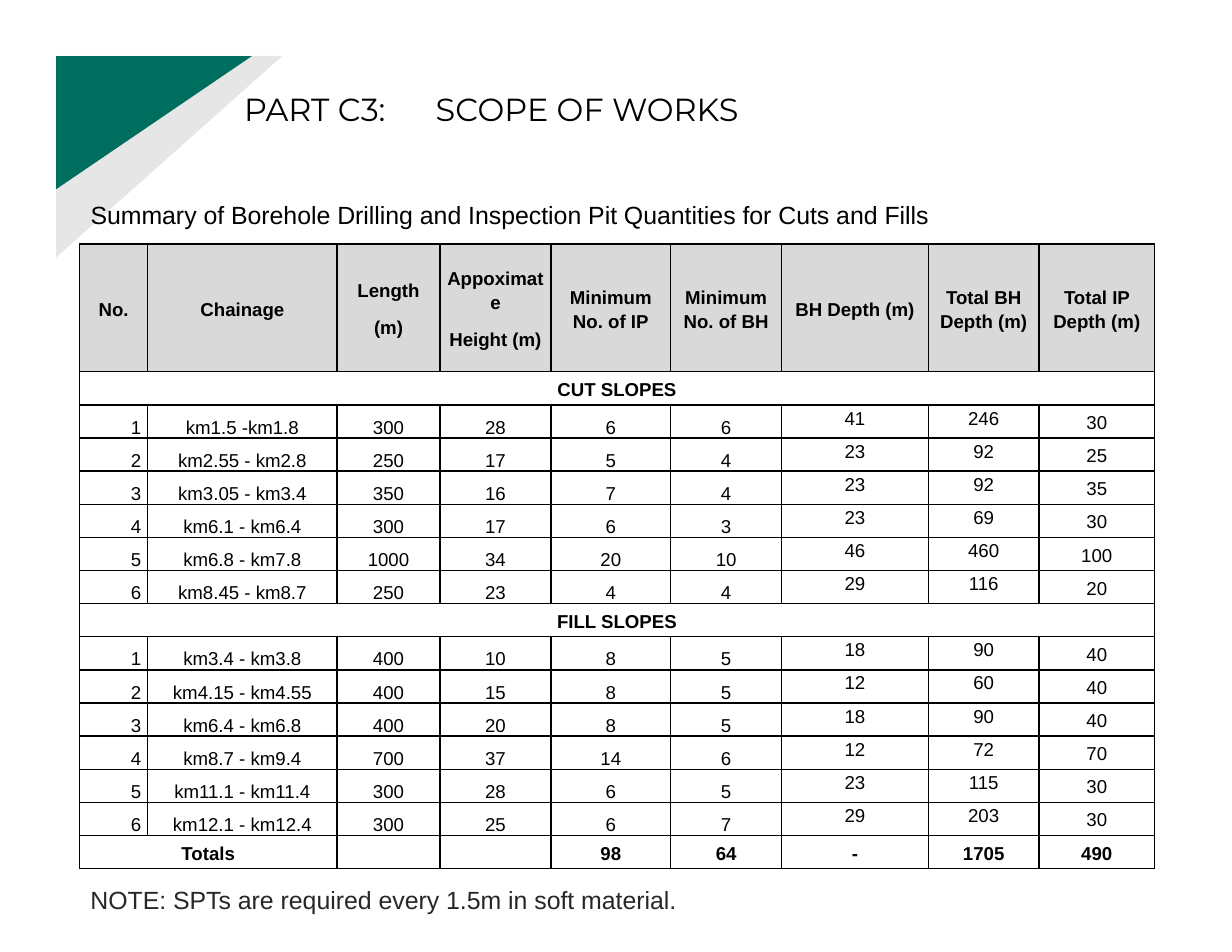
from lxml.etree import SubElement
from pptx import Presentation
from pptx.dml.color import RGBColor
from pptx.enum.text import MSO_ANCHOR, PP_ALIGN
from pptx.oxml.ns import qn
from pptx.util import Inches, Pt

COLORS = {
    "black": "000000",
    "note": "272727",
    "green": "006E5E",
    "grey": "E6E6E6",
    "header": "D9D9D9",
}

COLUMN_WIDTHS = [0.61, 1.69, 0.92, 0.99, 1.07, 0.99, 1.31, 0.99, 1.03]
TABLE_HEIGHT, HEADER_HEIGHT = 5.58, 1.14
HEADERS = [
    "No.", "Chainage", "Length\n(m)", "Appoximate\nHeight (m)",
    "Minimum No. of IP", "Minimum No. of BH", "BH Depth (m)",
    "Total BH Depth (m)", "Total IP Depth (m)",
]
# Chainage, length, height, IPs, BHs, BH depth, total BH depth, total IP depth
SECTIONS = {
    "CUT SLOPES": [
        ("km1.5 -km1.8", 300, 28, 6, 6, 41, 246, 30),
        ("km2.55 - km2.8", 250, 17, 5, 4, 23, 92, 25),
        ("km3.05 - km3.4", 350, 16, 7, 4, 23, 92, 35),
        ("km6.1 - km6.4", 300, 17, 6, 3, 23, 69, 30),
        ("km6.8 - km7.8", 1000, 34, 20, 10, 46, 460, 100),
        ("km8.45 - km8.7", 250, 23, 4, 4, 29, 116, 20),
    ],
    "FILL SLOPES": [
        ("km3.4 - km3.8", 400, 10, 8, 5, 18, 90, 40),
        ("km4.15 - km4.55", 400, 15, 8, 5, 12, 60, 40),
        ("km6.4 - km6.8", 400, 20, 8, 5, 18, 90, 40),
        ("km8.7 - km9.4", 700, 37, 14, 6, 12, 72, 70),
        ("km11.1 - km11.4", 300, 28, 6, 5, 23, 115, 30),
        ("km12.1 - km12.4", 300, 25, 6, 7, 29, 203, 30),
    ],
}
TOTALS = ["Totals", "", "", "", "98", "64", "-", "1705", "490"]
# Data cells sit low, except the two BH depth columns and the last one
DATA_ANCHORS = [MSO_ANCHOR.BOTTOM] * 6 + [MSO_ANCHOR.TOP] * 2 + [MSO_ANCHOR.MIDDLE]


def rgb(name):
    return RGBColor.from_string(COLORS[name])


def format_runs(p, size, font="Arial", color="black", bold=False):
    for r in p.runs:
        r.font.size = Pt(size)
        r.font.name = font
        r.font.bold = bold
        r.font.color.rgb = rgb(color)


def add_tab(p, position):
    tabs = SubElement(p._p.get_or_add_pPr(), qn("a:tabLst"))
    SubElement(tabs, qn("a:tab"), pos=str(Inches(position)), algn="l")


def add_corner(s, points, color):
    vertices = [(Inches(x), Inches(y)) for x, y in points]
    builder = s.shapes.build_freeform(*vertices[0])
    builder.add_line_segments(vertices[1:], close=True)
    sp = builder.convert_to_shape()
    sp.shadow.inherit = False
    sp.fill.solid()
    sp.fill.fore_color.rgb = rgb(color)
    sp.line.fill.background()


def add_text(s, left, top, width, height, text, color="black"):
    sp = s.shapes.add_textbox(Inches(left), Inches(top), Inches(width), Inches(height))
    tf = sp.text_frame
    tf.word_wrap = True
    tf.text = text
    p = tf.paragraphs[0]
    p.space_after = Pt(6)
    format_runs(p, 16, color=color)
    return p


def set_title(s, text):
    sp = s.shapes.title
    sp.left, sp.top = Inches(2.08), Inches(0.75)
    sp.width, sp.height = Inches(8.03), Inches(0.45)
    tf = sp.text_frame
    tf.text = text
    tf.word_wrap = True
    tf.vertical_anchor = MSO_ANCHOR.MIDDLE
    p = tf.paragraphs[0]
    p.alignment = PP_ALIGN.LEFT
    add_tab(p, 1.71)
    format_runs(p, 20.5, "Montserrat")


def set_borders(cell):
    tcPr = cell._tc.get_or_add_tcPr()
    for side in ("a:lnL", "a:lnR", "a:lnT", "a:lnB"):
        line = SubElement(tcPr, qn(side), w=str(Pt(1)))
        fill = SubElement(line, qn("a:solidFill"))
        SubElement(fill, qn("a:srgbClr"), val=COLORS["black"])


def fill_cell(cell, text, bold=False, anchor=MSO_ANCHOR.MIDDLE,
              align=PP_ALIGN.CENTER, fill=None):
    cell.margin_left = cell.margin_right = Inches(0.06)
    cell.margin_top = cell.margin_bottom = 0
    cell.vertical_anchor = anchor
    set_borders(cell)
    if fill:
        cell.fill.solid()
        cell.fill.fore_color.rgb = rgb(fill)
    else:
        cell.fill.background()
    cell.text_frame.text = text
    for p in cell.text_frame.paragraphs:
        p.alignment = align
        p.line_spacing = 1.15
        p.space_after = Pt(8)
        format_runs(p, 12, bold=bold)
        if not text:
            SubElement(p._p, qn("a:endParaRPr"), sz="1200")


def add_quantities(s):
    n_cols = len(HEADERS)
    n_rows = 2 + sum(1 + len(rows) for rows in SECTIONS.values())
    table = s.shapes.add_table(n_rows, n_cols, Inches(0.71), Inches(2.18),
                               Inches(sum(COLUMN_WIDTHS)), Inches(TABLE_HEIGHT)).table
    table.first_row = table.horz_banding = False
    for column, width in zip(table.columns, COLUMN_WIDTHS):
        column.width = Inches(width)
    for row in table.rows:
        row.height = Inches((TABLE_HEIGHT - HEADER_HEIGHT) / (n_rows - 1))
    table.rows[0].height = Inches(HEADER_HEIGHT)

    # Header and totals
    for c in range(n_cols):
        fill_cell(table.cell(0, c), HEADERS[c], bold=True, fill="header")
        fill_cell(table.cell(n_rows - 1, c), TOTALS[c], bold=True)
    table.cell(n_rows - 1, 0).merge(table.cell(n_rows - 1, 1))

    # Section bands and their numbered rows
    r = 1
    for name, rows in SECTIONS.items():
        for c in range(n_cols):
            fill_cell(table.cell(r, c), "" if c else name, bold=True)
        table.cell(r, 0).merge(table.cell(r, n_cols - 1))
        for number, values in enumerate(rows, 1):
            for c, value in enumerate((number, *values)):
                fill_cell(table.cell(r + number, c), str(value), anchor=DATA_ANCHORS[c],
                          align=PP_ALIGN.CENTER if c else PP_ALIGN.RIGHT)
        r += 1 + len(rows)


def main():
    prs = Presentation()
    prs.slide_width, prs.slide_height = Inches(11), Inches(8.5)
    s = prs.slides.add_slide(prs.slide_layouts[5])

    # Corner decoration
    add_corner(s, [(0.5, 2.3), (0.5, 0.5), (2.52, 0.5)], "grey")
    add_corner(s, [(0.5, 1.69), (0.5, 0.5), (2.25, 0.5)], "green")

    add_quantities(s)

    # Title, table caption and note
    set_title(s, "PART C3:\tSCOPE OF WORKS")
    caption = add_text(
        s, 0.71, 1.69, 7.79, 0.39,
        "Summary of Borehole Drilling and Inspection Pit Quantities for Cuts and Fills")
    caption.line_spacing = 1.15
    note = add_text(s, 0.71, 7.85, 5.73, 0.38,
                    "NOTE: SPTs are required every 1.5m in soft material.", "note")
    note.alignment = PP_ALIGN.JUSTIFY

    prs.save("out.pptx")


if __name__ == "__main__":
    main()
